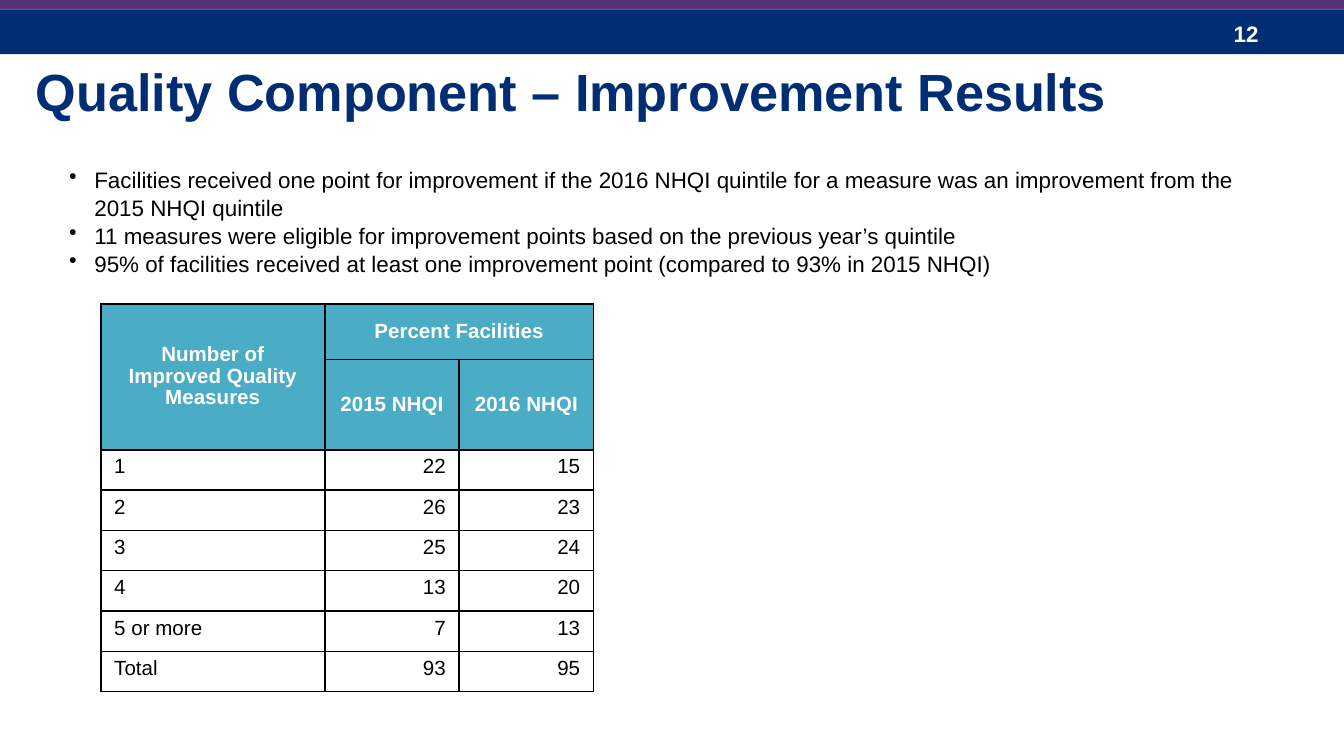
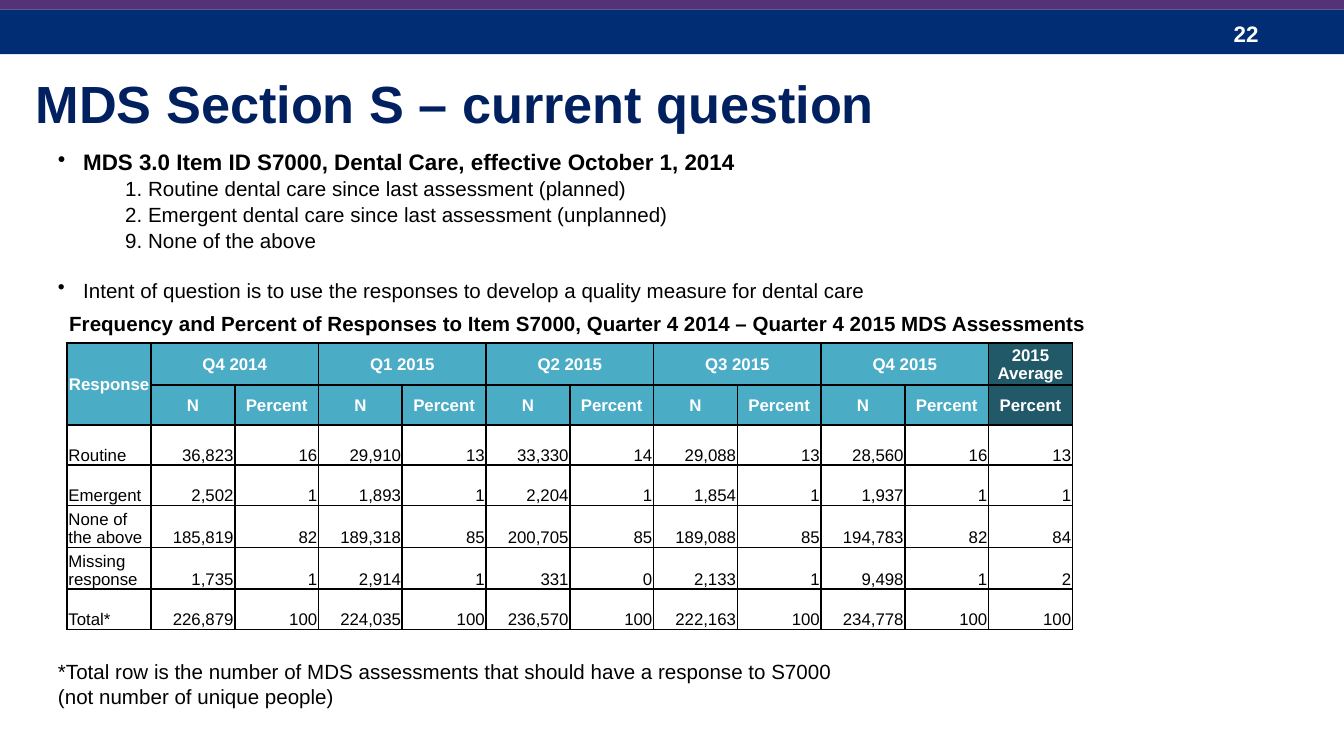
import pptx
import pptx.util
import pptx.dml.color
import pptx.enum.shapes
import pptx.enum.text
import pptx.oxml
import pptx.oxml.ns
from lxml import etree

Pt = pptx.util.Pt
Color = pptx.dml.color.RGBColor
Align = pptx.enum.text.PP_ALIGN
Anchor = pptx.enum.text.MSO_ANCHOR

NAVY = Color(0x00, 0x2D, 0x73)
DARK = Color(0x00, 0x20, 0x60)
PLUM = Color(0x55, 0x32, 0x78)
TEAL = Color(0x4B, 0xAC, 0xC6)
DEEP = Color(0x21, 0x59, 0x68)
WHITE = Color(0xFF, 0xFF, 0xFF)
BLACK = Color(0x00, 0x00, 0x00)
FONT = "Arial"
WIDE, HIGH = 720, 405

GAINS = [
    ["Number of Improved Quality Measures", "Percent Facilities", ""],
    ["", "2015 NHQI", "2016 NHQI"],
    ["1", "22", "15"],
    ["2", "26", "23"],
    ["3", "25", "24"],
    ["4", "13", "20"],
    ["5 or more", "7", "13"],
    ["Total", "93", "95"],
]
TERMS = ["Q4 2014", "Q1 2015", "Q2 2015", "Q3 2015", "Q4 2015"]
COUNTS = [
    ["Response"] + [t for term in TERMS for t in (term, "")] + ["2015 Average"],
    [""] + ["N", "Percent"] * len(TERMS) + ["Percent"],
    ["Routine", "36,823", "16", "29,910", "13", "33,330", "14",
     "29,088", "13", "28,560", "16", "13"],
    ["Emergent", "2,502", "1", "1,893", "1", "2,204", "1",
     "1,854", "1", "1,937", "1", "1"],
    ["None of the above", "185,819", "82", "189,318", "85", "200,705", "85",
     "189,088", "85", "194,783", "82", "84"],
    ["Missing response", "1,735", "1", "2,914", "1", "331", "0",
     "2,133", "1", "9,498", "1", "2"],
    ["Total*", "226,879", "100", "224,035", "100", "236,570", "100",
     "222,163", "100", "234,778", "100", "100"],
]


def style(para, size, color=BLACK, bold=False):
    font = para.font
    font.name, font.size, font.bold = FONT, Pt(size), bold
    font.color.rgb = color


def add_text(slide, box, wrap=True):
    frame = slide.shapes.add_textbox(*map(Pt, box)).text_frame
    frame.word_wrap = wrap
    return frame


# Bands and page number
def add_head(slide, page):
    bands = (((0, 5, WIDE, 24), NAVY), ((0, -1.5, WIDE, 6.5), PLUM))
    for box, color in bands:
        band = slide.shapes.add_shape(
            pptx.enum.shapes.MSO_SHAPE.RECTANGLE, *map(Pt, box))
        band.shadow.inherit = False
        band.fill.solid()
        band.fill.fore_color.rgb = color
        band.line.fill.background()
    para = add_text(slide, (653.8, 7.2, 54, 21.6)).paragraphs[0]
    para.text = str(page)
    style(para, 12, WHITE, True)


# Title placeholder
def add_title(slide, text, box, color):
    title = slide.shapes.title
    title.left, title.top, title.width, title.height = map(Pt, box)
    frame = title.text_frame
    frame.auto_size = pptx.enum.text.MSO_AUTO_SIZE.NONE
    frame.vertical_anchor = Anchor.TOP
    para = frame.paragraphs[0]
    para.text = text
    para.alignment = Align.LEFT
    style(para, 28, color, True)


# Body lines: (text, size, bold, bullet, indent, space before)
def add_body(slide, box, lines, inset=3.6):
    frame = add_text(slide, box)
    frame.margin_top = Pt(inset)
    for i, (text, size, bold, bullet, indent, gap) in enumerate(lines):
        para = frame.add_paragraph() if i else frame.paragraphs[0]
        para.text = text
        props = para._p.get_or_add_pPr()
        props.set("marL", str(Pt(indent)))
        if bullet:
            props.set("indent", str(-Pt(indent)))
            mark = etree.SubElement(props, pptx.oxml.ns.qn("a:buChar"))
            mark.set("char", "•")
        para.line_spacing = 1.04
        if gap:
            para.space_before = Pt(gap)
        style(para, size, BLACK, bold)


def add_edges(cell):
    props = cell._tc.get_or_add_tcPr()
    for side in ("L", "R", "T", "B"):
        props.append(pptx.oxml.parse_xml(
            f'<a:ln{side} {pptx.oxml.ns.nsdecls("a")} w="{Pt(1)}">'
            f'<a:solidFill><a:srgbClr val="{BLACK}"/></a:solidFill>'
            f'</a:ln{side}>'))


# Table with two header rows; blank header cells join their neighbour
def add_grid(slide, spot, rows, widths, heights, size, pads, anchor, tints):
    area = (*spot, sum(widths), sum(heights))
    grid = slide.shapes.add_table(
        len(rows), len(widths), *map(Pt, area)).table
    grid.horz_banding = False
    for col, width in zip(grid.columns, widths):
        col.width = Pt(width)
    for row, height in zip(grid.rows, heights):
        row.height = Pt(height)
    for r, row in enumerate(rows):
        head = r < 2
        for c, text in enumerate(row):
            cell = grid.cell(r, c)
            add_edges(cell)
            (cell.margin_left, cell.margin_top,
             cell.margin_right, cell.margin_bottom) = map(Pt, pads)
            cell.vertical_anchor = Anchor.MIDDLE if head else anchor
            if head:
                cell.fill.solid()
                cell.fill.fore_color.rgb = tints[c]
            else:
                cell.fill.background()
            para = cell.text_frame.paragraphs[0]
            para.text = text
            para.line_spacing = 0.95
            if head:
                para.alignment = Align.CENTER
            else:
                para.alignment = Align.RIGHT if c else Align.LEFT
            style(para, size, WHITE if head else BLACK, head)
    grid.cell(0, 0).merge(grid.cell(1, 0))
    for c, text in enumerate(rows[0]):
        if not text:
            grid.cell(0, c - 1).merge(grid.cell(0, c))
    return grid


def add_slide(deck, page):
    slide = deck.slides.add_slide(deck.slide_layouts[5])
    add_head(slide, page)
    return slide


# Improvement results
def build_gains(deck):
    slide = add_slide(deck, 12)
    add_title(slide, "Quality Component – Improvement Results",
              (12, 28.3, 684, 41), NAVY)
    points = (
        "Facilities received one point for improvement if the 2016 NHQI "
        "quintile for a measure was an improvement from the 2015 NHQI quintile",
        "11 measures were eligible for improvement points based on the "
        "previous year’s quintile",
        "95% of facilities received at least one improvement point "
        "(compared to 93% in 2015 NHQI)",
    )
    add_body(slide, (30, 70.5, 648, 138),
             [(text, 12, False, True, 13.5, 0) for text in points], 18)
    grid = add_grid(slide, (54, 162.7), GAINS, [120, 72, 72],
                    [30] * 2 + [21.6] * 6, 11, (7.2, 3.6, 7.2, 3.6),
                    Anchor.TOP, [TEAL] * 3)
    corner = grid.cell(0, 0)
    corner.margin_top = corner.margin_bottom = Pt(5.3)


# Dental care question
def build_dental(deck):
    slide = add_slide(deck, 22)
    add_title(slide, "MDS Section S – current question",
              (12, 34.5, 684, 48), DARK)
    add_body(slide, (24, 75.5, 654, 294.5), [
        ("MDS 3.0 Item ID S7000, Dental Care, effective October 1, 2014",
         12, True, True, 13.5, 0),
        ("1. Routine dental care since last assessment (planned)",
         11, False, False, 36, 0),
        ("2. Emergent dental care since last assessment (unplanned)",
         11, False, False, 36, 0),
        ("9. None of the above", 11, False, False, 36, 0),
        ("Intent of question is to use the responses to develop a quality "
         "measure for dental care", 11, False, True, 13.5, 13),
        ("*Total row is the number of MDS assessments that should have a "
         "response to S7000", 11, False, False, 0, 190.4),
        ("(not number of unique people)", 11, False, False, 0, 0),
    ])
    add_grid(slide, (36, 183.8), COUNTS, [44.88] * 12,
             [22.5, 21.5, 21.5, 21.5, 22.5, 22.5, 21.5], 9,
             (0.7, 0.7, 0.7, 0), Anchor.BOTTOM, [TEAL] * 11 + [DEEP])
    para = add_text(slide, (30, 163, 563, 20.6), False).paragraphs[0]
    para.text = ("Frequency and Percent of Responses to Item S7000, "
                 "Quarter 4 2014 – Quarter 4 2015 MDS Assessments")
    style(para, 11, BLACK, True)


def main():
    deck = pptx.Presentation()
    deck.slide_width, deck.slide_height = Pt(WIDE), Pt(HIGH)
    build_gains(deck)
    build_dental(deck)
    deck.save("out.pptx")


if __name__ == "__main__":
    main()
